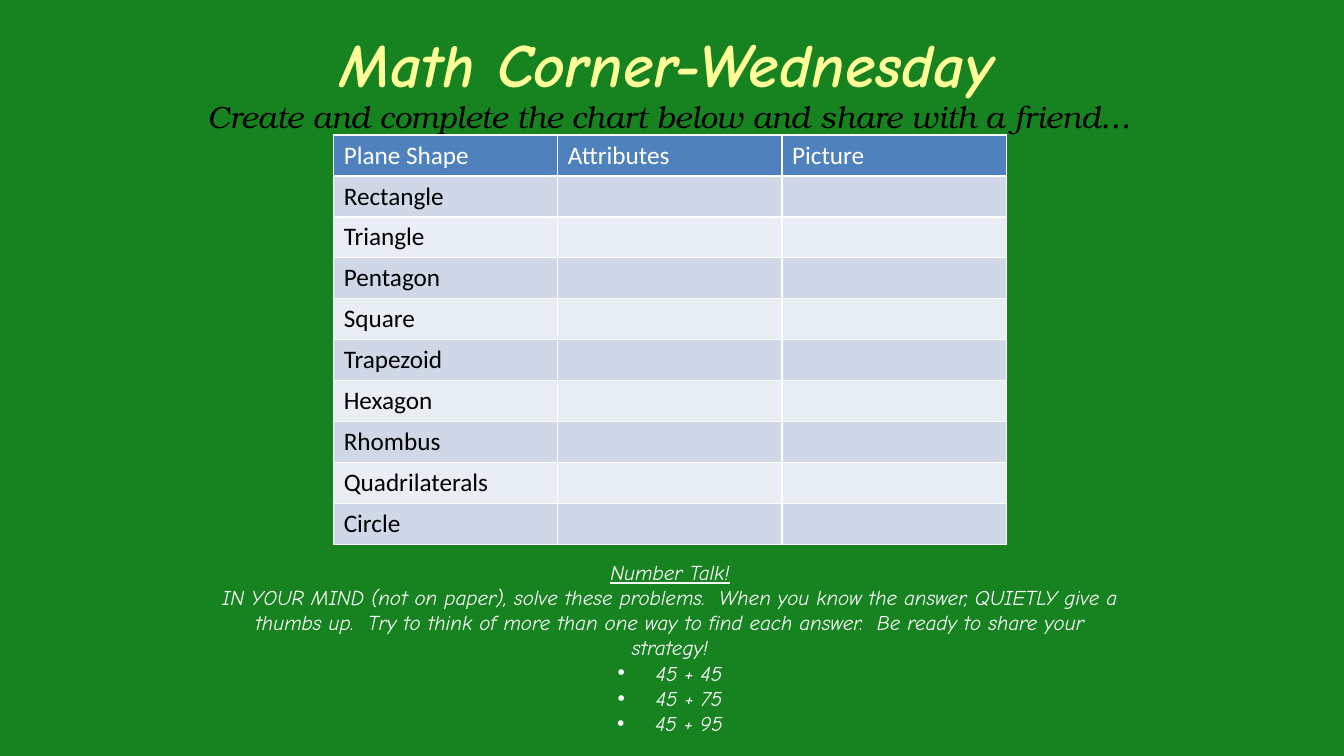
import lxml.etree
import pptx
import pptx.dml.color
import pptx.enum.text
import pptx.oxml.ns
import pptx.util

SLIDE_WIDTH = pptx.util.Inches(13.33)
SLIDE_HEIGHT = pptx.util.Inches(7.5)
CENTER = pptx.enum.text.PP_ALIGN.CENTER
MIDDLE = pptx.enum.text.MSO_ANCHOR.MIDDLE
TOP = pptx.enum.text.MSO_ANCHOR.TOP
qn = pptx.oxml.ns.qn

HEADINGS = ["Plane Shape", "Attributes", "Picture"]
PLANE_SHAPES = ["Rectangle", "Triangle", "Pentagon", "Square", "Trapezoid",
                "Hexagon", "Rhombus", "Quadrilaterals", "Circle"]
BANDS = ["D0D8E8", "E9EDF4"]
INSTRUCTIONS = (
    "IN YOUR MIND (not on paper), solve these problems.  When you know the answer, "
    "QUIETLY give a thumbs up.  Try to think of more than one way to find each answer.  "
    "Be ready to share your strategy!")
PROBLEMS = ["45 + 45", "45 + 75", "45 + 95"]

TITLE = {"name": "Comic Neue", "size": pptx.util.Pt(44), "bold": True,
         "italic": True, "color": "FFFF99"}
TASK = {"name": "TeX Gyre Bonum", "size": pptx.util.Pt(22), "italic": True,
        "color": "000000"}
TALK = {"name": "Comic Neue", "size": pptx.util.Pt(15), "italic": True,
        "color": "FFFFFF"}
HEADING = {"name": "Calibri", "size": pptx.util.Pt(18), "bold": False,
           "color": "FFFFFF"}
ENTRY = {**HEADING, "color": "000000"}


def paint(target, color):
    target.rgb = pptx.dml.color.RGBColor.from_string(color)


def fill_with(fill, color):
    fill.solid()
    paint(fill.fore_color, color)


def format_font(font, values):
    for attribute, value in values.items():
        if attribute == "color":
            paint(font.color, value)
        else:
            setattr(font, attribute, value)


def to_box(left, top, width, height):
    return [round(left * SLIDE_WIDTH), round(top * SLIDE_HEIGHT),
            round(width * SLIDE_WIDTH), round(height * SLIDE_HEIGHT)]


def add_bullet(paragraph):
    hanging = pptx.util.Inches(0.38)
    properties = paragraph._p.get_or_add_pPr()
    properties.set("marL", str(hanging))
    properties.set("indent", str(-hanging))
    lxml.etree.SubElement(properties, qn("a:buFont"), typeface="Arial")
    lxml.etree.SubElement(properties, qn("a:buChar"), char="•")


def add_lines(slide, box, lines, values, anchor=TOP):
    frame = slide.shapes.add_textbox(*box).text_frame
    frame.word_wrap = True
    frame.vertical_anchor = anchor
    for index, (text, bulleted, extra) in enumerate(lines):
        paragraph = frame.add_paragraph() if index else frame.paragraphs[0]
        paragraph.alignment = CENTER
        if bulleted:
            add_bullet(paragraph)
        run = paragraph.add_run()
        run.text = text
        format_font(run.font, {**values, **extra})


def add_borders(cell, color, width):
    properties = cell._tc.get_or_add_tcPr()
    for position, side in enumerate(["lnL", "lnR", "lnT", "lnB"]):
        line = lxml.etree.Element(qn(f"a:{side}"), w=str(pptx.util.Pt(width)))
        solid = lxml.etree.SubElement(line, qn("a:solidFill"))
        lxml.etree.SubElement(solid, qn("a:srgbClr"), val=color)
        properties.insert(position, line)


def add_shape_chart(slide, box):
    rows = [HEADINGS] + [[name, "", ""] for name in PLANE_SHAPES]
    table = slide.shapes.add_table(len(rows), len(HEADINGS), *box).table
    for row_index, row in enumerate(rows):
        for column_index, text in enumerate(row):
            cell = table.cell(row_index, column_index)
            fill_with(cell.fill, BANDS[(row_index - 1) % 2] if row_index else "4F81BD")
            add_borders(cell, "FFFFFF", 1)
            cell.text = text
            format_font(cell.text_frame.paragraphs[0].font,
                        ENTRY if row_index else HEADING)


def add_heading(slide, box):
    add_lines(slide, box, [("Math Corner-Wednesday", False, {})], TITLE, MIDDLE)


def add_task(slide, box):
    task = "Create and complete the chart below and share with a friend…"
    add_lines(slide, box, [(task, False, {})], TASK)


def add_number_talk(slide, box):
    lines = [("Number Talk!", False, {"underline": True}), (INSTRUCTIONS, False, {})]
    lines += [(problem, True, {}) for problem in PROBLEMS]
    add_lines(slide, box, lines, TALK)


def main():
    presentation = pptx.Presentation()
    presentation.slide_width = SLIDE_WIDTH
    presentation.slide_height = SLIDE_HEIGHT
    slide = presentation.slides.add_slide(presentation.slide_layouts[6])
    fill_with(slide.background.fill, "168220")
    add_heading(slide, to_box(2.12 / 13.33, 0, 9 / 13.33, 1.25 / 7.5))
    add_task(slide, to_box(1.85 / 13.33, 0.92 / 7.5, 9.58 / 13.33, 0.77 / 7.5))
    add_shape_chart(slide, to_box(3.31 / 13.33, 1.34 / 7.5, 6.67 / 13.33, 4.06 / 7.5))
    add_number_talk(slide, to_box(2.06 / 13.33, 5.5 / 7.5, 9.17 / 13.33, 1.87 / 7.5))
    presentation.save("out.pptx")


if __name__ == "__main__":
    main()
